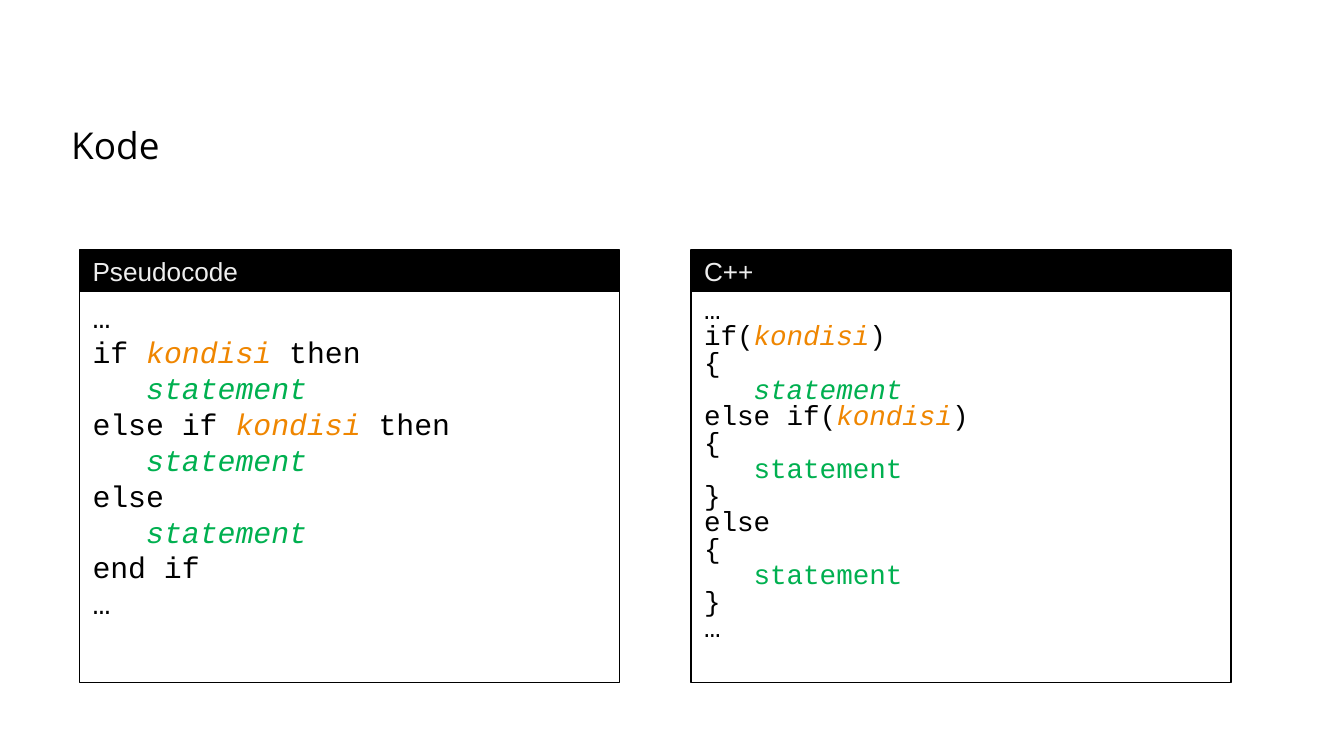
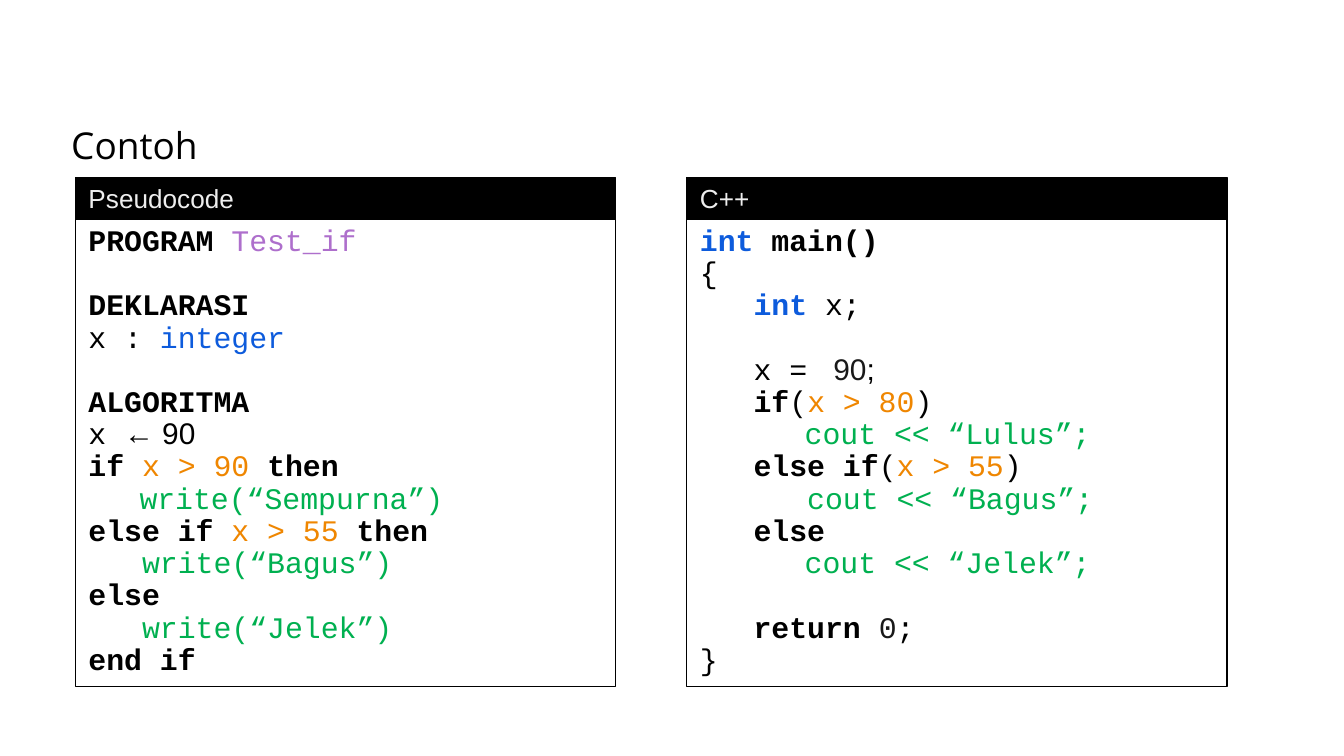
from lxml import etree
from pptx import Presentation
from pptx import util as u
from pptx.dml.color import RGBColor
from pptx.enum import shapes, text
from pptx.oxml.ns import qn

COLORS = {"black": "000000", "header": "EEEEEE", "orange": "EF8600", "green": "00B050",
          "purple": "AE6FCC", "blue": "0D5BDC", "dark": "191919"}
CODE_FONT, HEADER_FONT, TITLE_FONT = "Courier New", "Arial", "Open Sans"

# Code styles: colour, bold, italic, font
STYLES = {
    "plain": ("black", False, False, CODE_FONT),
    "key": ("black", True, False, CODE_FONT),
    "type": ("blue", True, False, CODE_FONT),
    "type name": ("blue", False, False, CODE_FONT),
    "program": ("purple", False, False, CODE_FONT),
    "test": ("orange", False, False, CODE_FONT),
    "condition": ("orange", False, True, CODE_FONT),
    "action": ("green", False, False, CODE_FONT),
    "statement": ("green", False, True, CODE_FONT),
    "digit": ("dark", False, False, CODE_FONT),
    "value": ("dark", False, False, HEADER_FONT),
    "sans": ("black", False, False, HEADER_FONT),
}

# Grid: two equal columns with a header band above each code box
COLUMN_WIDTH, COLUMN_STEP, HEADER_HEIGHT = 4.02, 4.55, 0.31
HANGING = 0.38

# Each line of code is a list of (style, text) pieces
STATEMENT = [("plain", "   "), ("statement", "statement")]
ACTION = [("plain", "   "), ("action", "statement")]
DOTS, ELSE = [("plain", "…")], [("plain", "else")]
OPEN, CLOSE = [("plain", "{")], [("plain", "}")]

pseudocode_form = [
    DOTS,
    [("plain", "if "), ("condition", "kondisi "), ("plain", "then")],
    STATEMENT,
    [("plain", "else if "), ("condition", "kondisi"), ("plain", " then")],
    STATEMENT,
    ELSE,
    STATEMENT,
    [("plain", "end if")],
    DOTS,
]
cpp_form = [
    DOTS,
    [("plain", "if("), ("condition", "kondisi"), ("plain", ")")],
    OPEN,
    STATEMENT,
    [("plain", "else if("), ("condition", "kondisi"), ("plain", ")")],
    OPEN, ACTION, CLOSE,
    ELSE,
    OPEN, ACTION, CLOSE,
    DOTS,
]
pseudocode_example = [
    [("key", "PROGRAM "), ("program", "Test_if")],
    [],
    [("key", "DEKLARASI")],
    [("plain", "x : "), ("type name", "integer")],
    [],
    [("key", "ALGORITMA")],
    [("plain", "x "), ("sans", "← 90")],
    [("key", "if "), ("test", "x > 90 "), ("key", "then")],
    [("plain", "\t"), ("action", "write(“Sempurna”)")],
    [("key", "else if "), ("test", "x > 55 "), ("key", "then")],
    [("key", "   "), ("action", "write(“Bagus”)")],
    [("key", "else")],
    [("key", "   "), ("action", "write(“Jelek”)")],
    [("key", "end if")],
]
cpp_example = [
    [("type", "int "), ("key", "main()")],
    OPEN,
    [("type name", "   "), ("type", "int "), ("plain", "x;")],
    [],
    [("plain", "   x = "), ("value", " 90"), ("sans", ";")],
    [("type", "   "), ("key", "if"), ("plain", "("), ("test", "x > 80"), ("plain", ")")],
    [("plain", "\t   "), ("action", "cout << “Lulus”;")],
    [("plain", "   "), ("key", "else if"), ("plain", "("), ("test", "x > 55"), ("plain", ")")],
    [("key", "      "), ("action", "cout << “Bagus”;")],
    [("key", "   else")],
    [("plain", "\t   "), ("action", "cout << “Jelek”;")],
    [],
    [("key", "   return "), ("digit", "0"), ("plain", ";")],
    CLOSE,
]

# Slides: title, left edge, header top, code height, and per column
# heading, code, size, line spacing, first line with a hanging indent
SLIDES = [
    ("Kode", 0.59, 1.86, 2.91, [("Pseudocode", pseudocode_form, 16, None, 99),
                                ("C++", cpp_form, 14.8, 0.8, 99)]),
    ("Contoh", 0.56, 1.32, 3.48, [("Pseudocode", pseudocode_example, 16, 0.9, 6),
                                  ("C++", cpp_example, 16, 0.9, 4)]),
]


def format_font(font, name, size, color, bold=False, italic=False):
    font.name, font.size = name, u.Pt(size)
    font.bold, font.italic = bold, italic
    font.color.rgb = RGBColor.from_string(COLORS[color])


def add_box(slide, left, top, height, filled):
    box = slide.shapes.add_shape(shapes.MSO_SHAPE.RECTANGLE, u.Inches(left), u.Inches(top),
                                 u.Inches(COLUMN_WIDTH), u.Inches(height))
    box.shadow.inherit = False
    if filled:
        box.fill.solid()
        box.fill.fore_color.rgb = RGBColor.from_string(COLORS["black"])
    else:
        box.fill.background()
    box.line.color.rgb = RGBColor.from_string(COLORS["black"])
    box.line.width = u.Pt(0.75)
    frame = box.text_frame
    frame.word_wrap = not filled
    frame.vertical_anchor = text.MSO_ANCHOR.MIDDLE if filled else text.MSO_ANCHOR.TOP
    return frame


# Widescreen, 16:9
prs = Presentation()
prs.slide_width = u.Inches(10)
prs.slide_height = prs.slide_width * 9 // 16

for heading, left, top, code_height, columns in SLIDES:
    slide = prs.slides.add_slide(prs.slide_layouts[5])

    # Title
    title = slide.shapes.title
    title.left, title.top = u.Inches(0.43), u.Inches(0.81)
    title.width, title.height = u.Inches(9.14), u.Inches(0.43)
    frame = title.text_frame
    frame.text = heading
    frame.auto_size = text.MSO_AUTO_SIZE.NONE
    frame.vertical_anchor = text.MSO_ANCHOR.TOP
    frame.margin_left = frame.margin_right = u.Inches(0.1)
    frame.margin_top = frame.margin_bottom = u.Inches(0.1)
    frame.paragraphs[0].alignment = text.PP_ALIGN.LEFT
    format_font(frame.paragraphs[0].runs[0].font, TITLE_FONT, 19.8, "black")

    for index, (language, code, size, spacing, hang_from) in enumerate(columns):
        column_left = left + index * COLUMN_STEP

        # Code box
        frame = add_box(slide, column_left, top + HEADER_HEIGHT, code_height, False)
        for number, line in enumerate(code):
            paragraph = frame.add_paragraph() if number else frame.paragraphs[0]
            paragraph.alignment = text.PP_ALIGN.LEFT
            if spacing:
                paragraph.line_spacing = spacing
            if number >= hang_from:
                properties = paragraph._p.get_or_add_pPr()
                properties.set("marL", str(u.Inches(HANGING)))
                properties.set("indent", str(-u.Inches(HANGING)))
            for style, piece in line:
                run = paragraph.add_run()
                run.text = piece
                color, bold, italic, font_name = STYLES[style]
                format_font(run.font, font_name, size, color, bold, italic)
            if not line:
                end = etree.SubElement(paragraph._p, qn("a:endParaRPr"), sz=str(size * 100))
                etree.SubElement(end, qn("a:latin"), typeface=CODE_FONT)

        # Header band
        frame = add_box(slide, column_left, top, HEADER_HEIGHT, True)
        frame.text = language
        frame.paragraphs[0].alignment = text.PP_ALIGN.LEFT
        format_font(frame.paragraphs[0].runs[0].font, HEADER_FONT, 14, "header")

prs.save("out.pptx")
